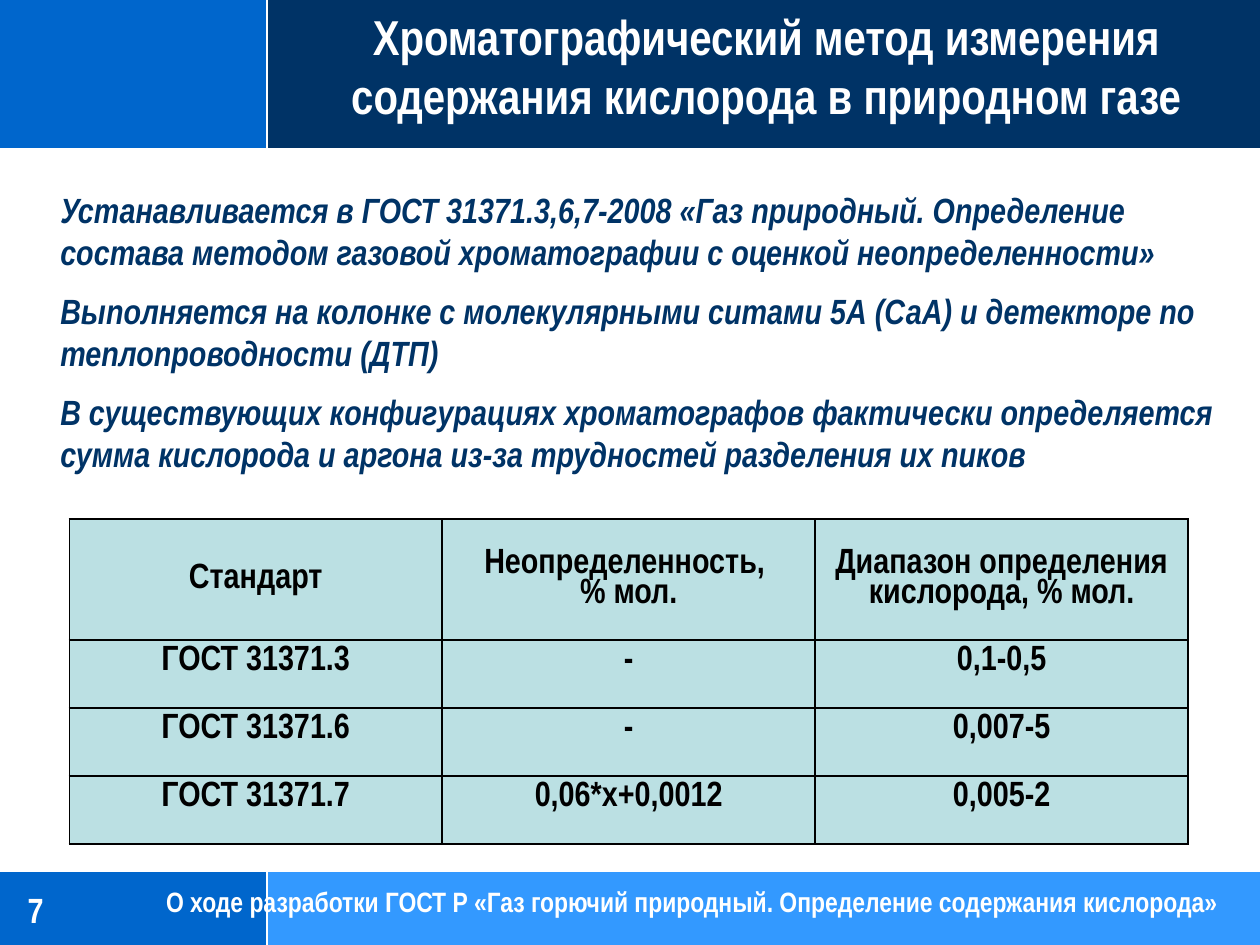
from dataclasses import dataclass

from lxml import etree
from pptx import Presentation
from pptx import util as u
from pptx.dml.color import RGBColor
from pptx.enum import shapes, text
from pptx.oxml import ns


@dataclass(frozen=True)
class Theme:
    font: str = "Arial Narrow"
    navy: str = "003366"
    blue: str = "0066CC"
    sky: str = "3399FF"
    cell: str = "BBE0E3"
    white: str = "FFFFFF"
    black: str = "000000"
    head: int = 28
    body: int = 20
    foot: int = 16
    gap: float = 9.6
    pitch: float = 0.9


T = Theme()
WIDE, HIGH = 10, 7.5
SPLIT = 2.12          # where the left band meets the right one
TOP, BASE = 1.18, 6.91  # foot of the header, head of the footer

TITLE = "Хроматографический метод измерения содержания кислорода в природном газе"
BODY = [
    "Устанавливается в ГОСТ 31371.3,6,7-2008 «Газ природный. Определение "
    "состава методом газовой хроматографии с оценкой неопределенности»",
    "Выполняется на колонке с молекулярными ситами 5А (СаА) и детекторе по "
    "теплопроводности (ДТП)",
    "В существующих конфигурациях хроматографов фактически определяется\n"
    "сумма кислорода и аргона из-за трудностей разделения их пиков",
]
FOOTER = ("О ходе разработки ГОСТ Р «Газ горючий природный. "
          "Определение содержания кислорода»")
ROWS = [
    ["Стандарт", "Неопределенность, \n% мол.", "Диапазон определения кислорода, % мол."],
    ["ГОСТ 31371.3", "-", "0,1-0,5"],
    ["ГОСТ 31371.6", "-", "0,007-5"],
    ["ГОСТ 31371.7", "0,06*x+0,0012", "0,005-2"],
]


def rgb(code):
    return RGBColor.from_string(code)


def write(frame, blocks, size=T.body, color=T.white, italic=False,
          align=text.PP_ALIGN.LEFT, pitch=None):
    """Fill a frame; blocks are set apart, lines within a block are not."""
    frame.word_wrap = True
    para = None
    for block in blocks:
        for row, line in enumerate(block.split("\n")):
            first = para is None
            para = frame.paragraphs[0] if first else frame.add_paragraph()
            para.alignment = align
            para.space_before = u.Pt(T.gap if row == 0 and not first else 0)
            if pitch:
                para.line_spacing = pitch
            run = para.add_run()
            run.text = line
            font = run.font
            font.name, font.size = T.font, u.Pt(size)
            font.bold, font.italic = True, italic
            font.color.rgb = rgb(color)


def place(shape, x, y, w, h):
    shape.left, shape.top = u.Inches(x), u.Inches(y)
    shape.width, shape.height = u.Inches(w), u.Inches(h)


def label(slide, box, blocks, **form):
    shape = slide.shapes.add_textbox(*map(u.Inches, box))
    write(shape.text_frame, blocks, **form)
    return shape.text_frame


def block(slide, x, y, w, h, fill):
    shape = slide.shapes.add_shape(
        shapes.MSO_SHAPE.RECTANGLE, *map(u.Inches, (x, y, w, h)))
    shape.shadow.inherit = False
    shape.fill.solid()
    shape.fill.fore_color.rgb = rgb(fill)
    shape.line.fill.background()


def rule(slide, *ends):
    line = slide.shapes.add_connector(
        shapes.MSO_CONNECTOR.STRAIGHT, *map(u.Inches, ends))
    line.line.color.rgb = rgb(T.white)
    line.line.width = u.Pt(1.25)
    etree.SubElement(line.element.spPr, ns.qn("a:effectLst"))


def band(slide, y, end, fill):
    """Two-tone strip with a white divider."""
    block(slide, 0, y, SPLIT, end - y, T.blue)
    block(slide, SPLIT, y, WIDE - SPLIT, end - y, fill)
    rule(slide, SPLIT, y, SPLIT, end)


def border(cell):
    props = cell._tc.get_or_add_tcPr()
    for spot, side in enumerate(("lnL", "lnR", "lnT", "lnB")):
        line = etree.Element(ns.qn(f"a:{side}"), w=str(u.Pt(1)))
        fill = etree.SubElement(line, ns.qn("a:solidFill"))
        etree.SubElement(fill, ns.qn("a:srgbClr"), val=T.black)
        props.insert(spot, line)


def grid(slide, x, y, wide, highs, rows):
    frame = slide.shapes.add_table(
        len(rows), len(rows[0]),
        *map(u.Inches, (x, y, wide * len(rows[0]), sum(highs))))
    table = frame.table
    for col in table.columns:
        col.width = u.Inches(wide)
    for r, (high, row) in enumerate(zip(highs, rows)):
        table.rows[r].height = u.Inches(high)
        for c, words in enumerate(row):
            cell = table.cell(r, c)
            cell.fill.solid()
            cell.fill.fore_color.rgb = rgb(T.cell)
            cell.vertical_anchor = (text.MSO_ANCHOR.TOP if r
                                    else text.MSO_ANCHOR.MIDDLE)
            write(cell.text_frame, [words], color=T.black,
                  align=text.PP_ALIGN.CENTER, pitch=T.pitch)
            border(cell)


def title(slide):
    shape = slide.shapes.title
    place(shape, 2.16, 0, 7.84, 1.04)
    frame = shape.text_frame
    frame.auto_size = text.MSO_AUTO_SIZE.NONE
    frame.vertical_anchor = text.MSO_ANCHOR.TOP
    write(frame, [TITLE], size=T.head, align=text.PP_ALIGN.CENTER)
    slide.shapes.element.append(shape.element)  # bring above the band


def main():
    deck = Presentation()
    deck.slide_width, deck.slide_height = u.Inches(WIDE), u.Inches(HIGH)
    slide = deck.slides.add_slide(deck.slide_layouts[5])

    # Header and footer bands
    band(slide, BASE, HIGH, T.sky)
    band(slide, 0, TOP, T.navy)
    for y in (BASE, TOP):
        rule(slide, 0, y, WIDE, y)

    # Table of standards
    grid(slide, 0.55, 4.12, 2.96, [0.96] + [0.54] * 3, ROWS)

    # Page number and footer
    page = label(slide, (0.22, 6.96, 1.63, 0.52), ["7"])
    page.margin_left = page.margin_right = 0
    page.margin_top = page.margin_bottom = 0
    page.vertical_anchor = text.MSO_ANCHOR.MIDDLE
    label(slide, (1.22, 6.97, 8.64, 0.69), [FOOTER], size=T.foot)

    # Title and body
    title(slide)
    label(slide, (0.38, 1.45, 9.48, 2.39), BODY, color=T.navy, italic=True)

    deck.save("out.pptx")


if __name__ == "__main__":
    main()
